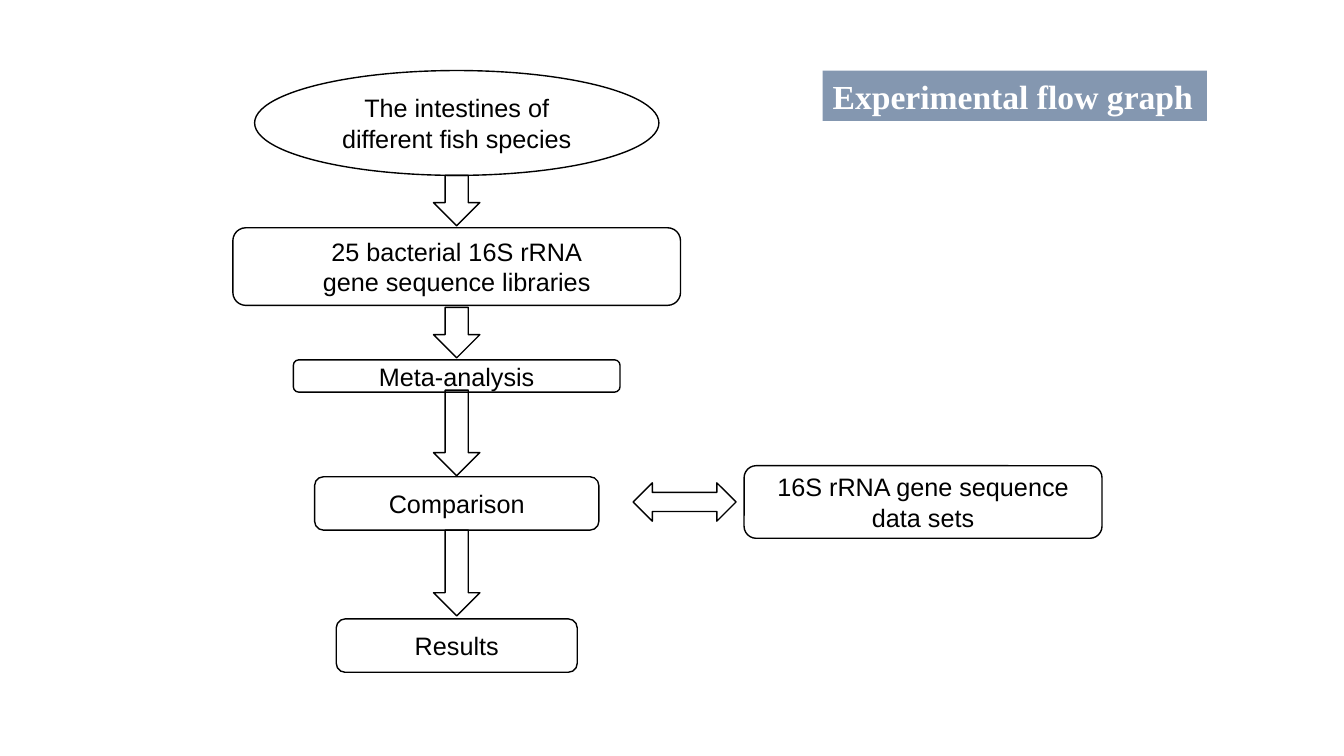
"""Build the experimental flow graph slide."""
from dataclasses import dataclass

from pptx import Presentation
from pptx.dml.color import RGBColor
from pptx.enum.shapes import MSO_SHAPE
from pptx.enum.text import MSO_ANCHOR, PP_ALIGN
from pptx.util import Inches, Pt

OVAL, ROUND = MSO_SHAPE.OVAL, MSO_SHAPE.ROUNDED_RECTANGLE
DOWN, BOTH_WAYS = MSO_SHAPE.DOWN_ARROW, MSO_SHAPE.LEFT_RIGHT_ARROW
CENTER, LEFT = PP_ALIGN.CENTER, PP_ALIGN.LEFT
MIDDLE, TOP = MSO_ANCHOR.MIDDLE, MSO_ANCHOR.TOP


@dataclass(frozen=True)
class Theme:
    ink: RGBColor = RGBColor(0, 0, 0)
    banner: RGBColor = RGBColor(0x84, 0x97, 0xB0)
    banner_text: RGBColor = RGBColor(0xFF, 0xFF, 0xFF)
    body_font: str = "Arial"
    title_font: str = "Times New Roman"
    body_size: int = 18
    title_size: int = 24
    line_width: int = 1


theme = Theme()


def write(sp, text, font=theme.body_font, size=theme.body_size, color=theme.ink,
          bold=False, align=CENTER, anchor=MIDDLE, wrap=True):
    tf = sp.text_frame
    tf.word_wrap = wrap
    tf.vertical_anchor = anchor
    tf.text = text
    for p in tf.paragraphs:
        p.alignment = align
        p.font.name = font
        p.font.size = Pt(size)
        p.font.color.rgb = color
        p.font.bold = bold


def add_outline(kind, left, top, width, height):
    sp = slide.shapes.add_shape(kind, Inches(left), Inches(top), Inches(width), Inches(height))
    sp.shadow.inherit = False
    sp.fill.background()
    sp.line.color.rgb = theme.ink
    sp.line.width = Pt(theme.line_width)
    return sp


prs = Presentation()
prs.slide_width, prs.slide_height = Inches(13.33), Inches(7.5)
slide = prs.slides.add_slide(prs.slide_layouts[6])

column_center = 4.53
steps = [
    (OVAL, 0.7, 4.01, 1.04, "The intestines of\ndifferent fish species"),
    (ROUND, 2.26, 4.44, 0.77, "25 bacterial 16S rRNA\ngene sequence libraries"),
    (ROUND, 3.57, 3.24, 0.32, "Meta-analysis"),
    (ROUND, 4.73, 2.82, 0.53, "Comparison"),
    (ROUND, 6.14, 2.39, 0.53, "Results"),
]
for kind, top, width, height, text in steps:
    write(add_outline(kind, column_center - width / 2, top, width, height), text)

arrow_width = 0.46
for top, height in [(1.74, 0.5), (3.05, 0.5), (3.87, 0.85), (5.26, 0.85)]:
    add_outline(DOWN, column_center - arrow_width / 2, top, arrow_width, height)

add_outline(BOTH_WAYS, 6.28, 4.79, 1.02, 0.38)
write(add_outline(ROUND, 7.38, 4.62, 3.55, 0.72), "16S rRNA gene sequence\ndata sets")

title = slide.shapes.add_textbox(Inches(8.16), Inches(0.7), Inches(3.81), Inches(0.5))
title.fill.solid()
title.fill.fore_color.rgb = theme.banner
write(title, "Experimental flow graph", font=theme.title_font, size=theme.title_size,
      color=theme.banner_text, bold=True, align=LEFT, anchor=TOP, wrap=False)

prs.save("out.pptx")
